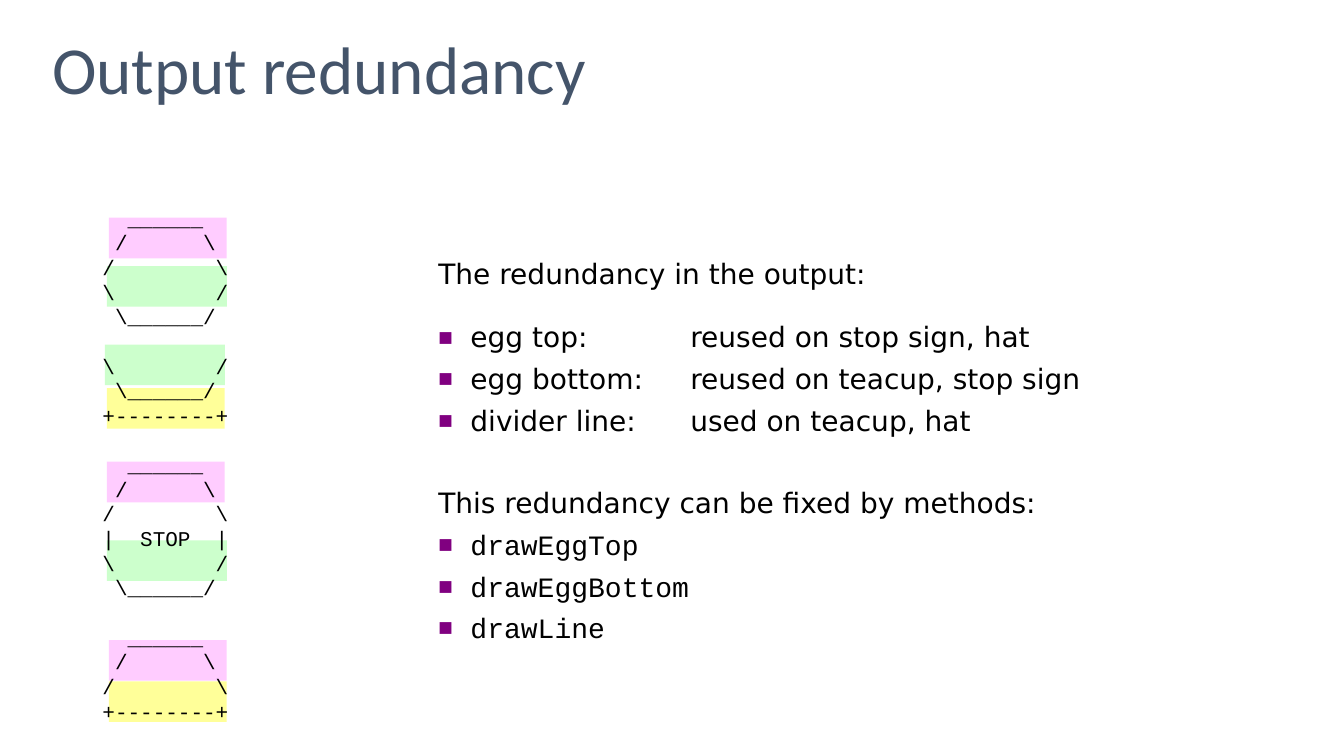
from lxml import etree
from pptx import Presentation
from pptx import util as u
from pptx.dml.color import RGBColor
from pptx.enum import shapes, text
from pptx.oxml import ns

Pt = u.Pt
COLORS = {
    "title": "44546A", "ink": "000000", "bullet": "800080",
    "top": "FFCCFF", "bottom": "CCFFCC", "line": "FFFF99",
}
TITLE_FONT, CODE_FONT, TEXT_FONT = "Calibri", "Courier New", "DejaVu Sans"

EGG_TOP = ["  ______", " /      \\", "/        \\"]
EGG_BOTTOM = ["\\        /", " \\______/"]
DIVIDER = ["+--------+"]
FIGURES = [
    EGG_TOP + EGG_BOTTOM,
    EGG_BOTTOM + DIVIDER,
    EGG_TOP + ["|  STOP  |"] + EGG_BOTTOM,
    EGG_TOP + DIVIDER,
]
BANDS = [
    ("line", 77.8, 486.7, 84.2), ("line", 76.3, 277.2, 84.2),
    ("bottom", 74.9, 246.2, 85.7), ("top", 76.3, 329.8, 84.2),
    ("top", 77.8, 457.2, 84.2), ("top", 77.8, 155.5, 84.2),
    ("bottom", 76.3, 190.1, 85.7), ("bottom", 76.3, 385.9, 85.7),
]
BAND_HEIGHT = 29
REUSES = [
    ("egg top:", "reused on stop sign, hat"),
    ("egg bottom:", "reused on teacup, stop sign"),
    ("divider line:", "used on teacup, hat"),
]
METHODS = ["drawEggTop", "drawEggBottom", "drawLine"]


def color(name):
    """Return the named palette colour."""
    return RGBColor.from_string(COLORS[name])


def place(box, left, top, width, height):
    """Set the position and size of a box in points."""
    box.left, box.top, box.width, box.height = map(Pt, (left, top, width, height))


def add_span(para, words, font, size, ink="ink"):
    """Add one formatted run to a paragraph."""
    span = para.add_run()
    span.text = words
    span.font.name, span.font.size = font, Pt(size)
    span.font.color.rgb = color(ink)


def next_para(frame, before):
    """Return the first unused paragraph of a frame, or a new one."""
    first = frame.paragraphs[0]
    para = frame.add_paragraph() if first.runs else first
    para.space_before = Pt(before)
    para.space_after = Pt(0)
    return para


def add_node(parent, tag, **attributes):
    """Append a DrawingML element to a parent."""
    node = etree.SubElement(parent, ns.qn(tag))
    for key, value in attributes.items():
        node.set(key, str(value))
    return node


def set_indent(para, margin, hanging):
    """Set the left margin and hanging indent, and return the properties."""
    properties = para._p.get_or_add_pPr()
    properties.set("marL", str(Pt(margin)))
    properties.set("indent", str(-Pt(hanging)))
    return properties


def add_band(page, kind, left, top, width):
    """Add a coloured band behind a repeated part."""
    band = page.shapes.add_shape(
        shapes.MSO_SHAPE.RECTANGLE, Pt(left), Pt(top), Pt(width), Pt(BAND_HEIGHT))
    band.shadow.inherit = False
    band.fill.solid()
    band.fill.fore_color.rgb = color(kind)
    band.line.fill.background()


def fill_title(title):
    """Write the slide title."""
    place(title, 30, 0, 900, 104.4)
    frame = title.text_frame
    frame.auto_size = text.MSO_AUTO_SIZE.NONE
    frame.vertical_anchor = text.MSO_ANCHOR.MIDDLE
    para = next_para(frame, 0)
    para.alignment = text.PP_ALIGN.LEFT
    para.line_spacing = 0.9
    add_span(para, "Output redundancy", TITLE_FONT, 48, "title")


def fill_figures(body):
    """Write the character drawings, one paragraph per line."""
    place(body, 30, 104.4, 900, 407.6)
    frame = body.text_frame
    frame.auto_size = text.MSO_AUTO_SIZE.NONE
    frame.margin_top = Pt(47.6)
    for number, figure in enumerate(FIGURES):
        for row, line in enumerate(figure):
            gap = 5 if row else 22.6 if number else 0
            para = next_para(frame, gap)
            para.line_spacing = Pt(12.6)
            add_node(set_indent(para, 36, 0), "a:buNone")
            add_span(para, line, CODE_FONT, 15)


def add_bullet(frame, words, font, before=5.8):
    """Add a paragraph with a small square bullet and a tab stop."""
    para = next_para(frame, before)
    properties = set_indent(para, 23, 23)
    tint = add_node(properties, "a:buClr")
    add_node(tint, "a:srgbClr", val=COLORS["bullet"])
    add_node(properties, "a:buSzPct", val=55000)
    add_node(properties, "a:buFont", typeface=TEXT_FONT)
    add_node(properties, "a:buChar", char="■")
    tabs = add_node(properties, "a:tabLst")
    add_node(tabs, "a:tab", pos=Pt(180), algn="l")
    add_span(para, words, font, 20)


def add_notes_box(page):
    """Add the explanation beside the drawings."""
    box = page.shapes.add_textbox(Pt(306), Pt(180), Pt(504), Pt(278))
    frame = box.text_frame
    frame.word_wrap = True
    add_span(next_para(frame, 0), "The redundancy in the output:", TEXT_FONT, 20)
    for row, (part, reuse) in enumerate(REUSES):
        add_bullet(frame, f"{part}\t{reuse}", TEXT_FONT, 5.8 if row else 21)
    add_span(next_para(frame, 34.6),
             "This redundancy can be fixed by methods:", TEXT_FONT, 20)
    for method in METHODS:
        add_bullet(frame, method, CODE_FONT)


def main():
    """Build and save the deck."""
    deck = Presentation()
    deck.slide_width, deck.slide_height = Pt(960), Pt(540)
    page = deck.slides.add_slide(deck.slide_layouts[1])
    title, body = page.shapes.title, page.placeholders[1]
    for band in BANDS:
        add_band(page, *band)
    for holder in (body, title):
        holder.element.getparent().append(holder.element)
    fill_figures(body)
    fill_title(title)
    add_notes_box(page)
    deck.save("out.pptx")


if __name__ == "__main__":
    main()
